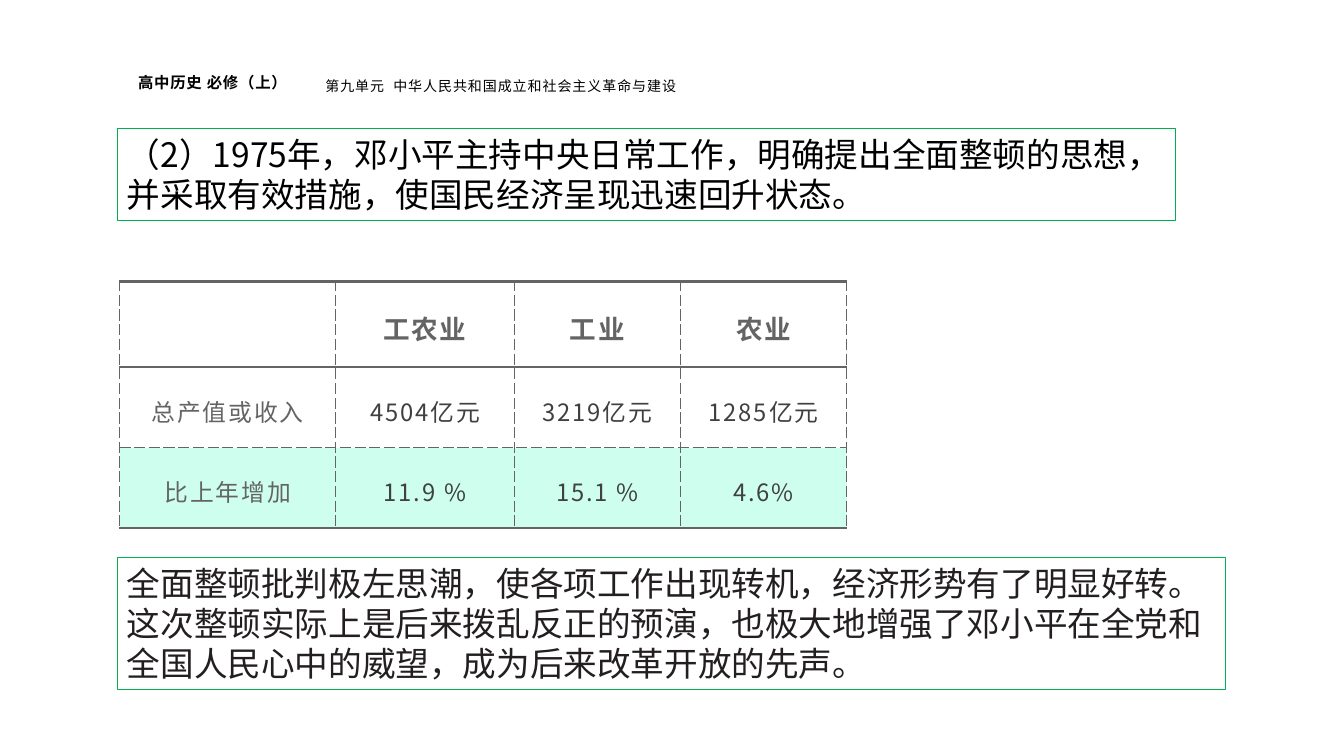
from dataclasses import dataclass

from lxml import etree
from pptx import Presentation
from pptx.dml.color import RGBColor
from pptx.enum.shapes import MSO_SHAPE
from pptx.enum.text import MSO_ANCHOR, PP_ALIGN
from pptx.oxml.ns import qn
from pptx.util import Cm, Pt

RECT = MSO_SHAPE.RECTANGLE
TOP, MIDDLE = MSO_ANCHOR.TOP, MSO_ANCHOR.MIDDLE
LEFT, CENTER = PP_ALIGN.LEFT, PP_ALIGN.CENTER


@dataclass(frozen=True)
class Theme:
    sans: str = "Noto Sans CJK SC"
    latin: str = "Arial"
    black: str = "000000"
    ink: str = "231F20"
    grey: str = "646464"
    dark: str = "404040"
    green: str = "00B050"
    mint: str = "CEFFEE"
    white: str = "FFFFFF"
    body: int = 24
    head: int = 19
    cell: int = 17
    book: int = 11
    unit: int = 10
    thin: float = 0.75
    thick: float = 2.25


T = Theme()
BOOK = "高中历史 必修（上）"
UNIT = "第九单元  中华人民共和国成立和社会主义革命与建设"
POINT = ("（2）1975年，邓小平主持中央日常工作，明确提出全面整顿的思想，"
         "并采取有效措施，使国民经济呈现迅速回升状态。")
RESULT = ("全面整顿批判极左思潮，使各项工作出现转机，经济形势有了明显好转。"
          "这次整顿实际上是后来拨乱反正的预演，也极大地增强了邓小平在全党和"
          "全国人民心中的威望，成为后来改革开放的先声。")
ROWS = [
    ["", "工农业", "工业", "农业"],
    ["总产值或收入", "4504亿元", "3219亿元", "1285亿元"],
    ["比上年增加", "11.9 %", "15.1 %", "4.6%"],
]
WIDTHS = [5.44, 4.5, 4.19, 4.19]
HEIGHTS = [2.16, 2.03, 2.03]


def write(frame, text, size, color, face=T.sans, bold=False, gap=0, align=LEFT):
    """Fill the frame with one paragraph; gap is letter spacing in points."""
    frame.word_wrap = True
    para = frame.paragraphs[0]
    para.text = text
    para.alignment = align
    font = para.font
    font.name, font.size, font.bold = face, Pt(size), bold
    font.color.rgb = RGBColor.from_string(color)
    props = para._p.pPr.find(qn("a:defRPr"))
    props.set("spc", str(round(gap * 100)))
    asian = etree.Element(qn("a:ea"), typeface=T.sans)
    props.find(qn("a:latin")).addnext(asian)
    return para


def header(slide, left, top):
    book = slide.shapes.add_textbox(Cm(left), Cm(top), Cm(5.21), Cm(1.24))
    write(book.text_frame, BOOK, T.book, T.black, bold=True, gap=0.5)
    unit = slide.shapes.add_textbox(Cm(left + 4.72), Cm(top + 0.1), Cm(9.78), Cm(0.69))
    write(unit.text_frame, UNIT, T.unit, T.black, T.latin, gap=0.7)


def panel(slide, box, text, color, face):
    shape = slide.shapes.add_shape(RECT, *map(Cm, box))
    shape.shadow.inherit = False
    shape.fill.background()
    shape.line.color.rgb = RGBColor.from_string(T.green)
    shape.line.width = Pt(T.thin)
    shape.text_frame.vertical_anchor = TOP
    write(shape.text_frame, text, T.body, color, face)


def border(cell, heavy):
    """Rule all four sides: solid where heavy, dashed elsewhere."""
    props = cell._tc.get_or_add_tcPr()
    for spot, side in enumerate("LRTB"):
        solid = side in heavy
        width = Pt(T.thick if solid else T.thin)
        line = etree.Element(qn(f"a:ln{side}"), w=str(int(width)))
        fill = etree.SubElement(line, qn("a:solidFill"))
        etree.SubElement(fill, qn("a:srgbClr"), val=T.grey)
        etree.SubElement(line, qn("a:prstDash"), val="solid" if solid else "sysDash")
        props.insert(spot, line)


def figures(slide, left, top):
    frame = slide.shapes.add_table(len(ROWS), len(WIDTHS), Cm(left), Cm(top),
                                   Cm(sum(WIDTHS)), Cm(sum(HEIGHTS)))
    table = frame.table
    table.first_row = table.horz_banding = False
    for col, width in zip(table.columns, WIDTHS):
        col.width = Cm(width)
    for row, height in zip(table.rows, HEIGHTS):
        row.height = Cm(height)
    heavy = ["TB", "T", "B"]
    for r, texts in enumerate(ROWS):
        for c, text in enumerate(texts):
            cell = table.cell(r, c)
            cell.fill.solid()
            cell.fill.fore_color.rgb = RGBColor.from_string(T.mint if r == 2 else T.white)
            border(cell, heavy[r])
            cell.vertical_anchor = MIDDLE
            cell.margin_left = cell.margin_right = Cm(0.61)
            cell.margin_top = cell.margin_bottom = Cm(0.38)
            if text:
                para = write(cell.text_frame, text, T.cell if r else T.head,
                             T.dark if r and c else T.grey,
                             bold=r == 0, gap=1.3, align=CENTER)
                para.line_spacing = 1.2


def main():
    deck = Presentation()
    deck.slide_width, deck.slide_height = Cm(33.87), Cm(19.05)
    slide = deck.slides.add_slide(deck.slide_layouts[6])
    header(slide, 3.23, 1.73)
    panel(slide, (2.95, 3.25, 26.67, 2.31), POINT, T.black, T.sans)
    figures(slide, 3.02, 7.09)
    panel(slide, (2.95, 14.05, 27.94, 3.33), RESULT, T.ink, T.latin)
    deck.save("out.pptx")


if __name__ == "__main__":
    main()
